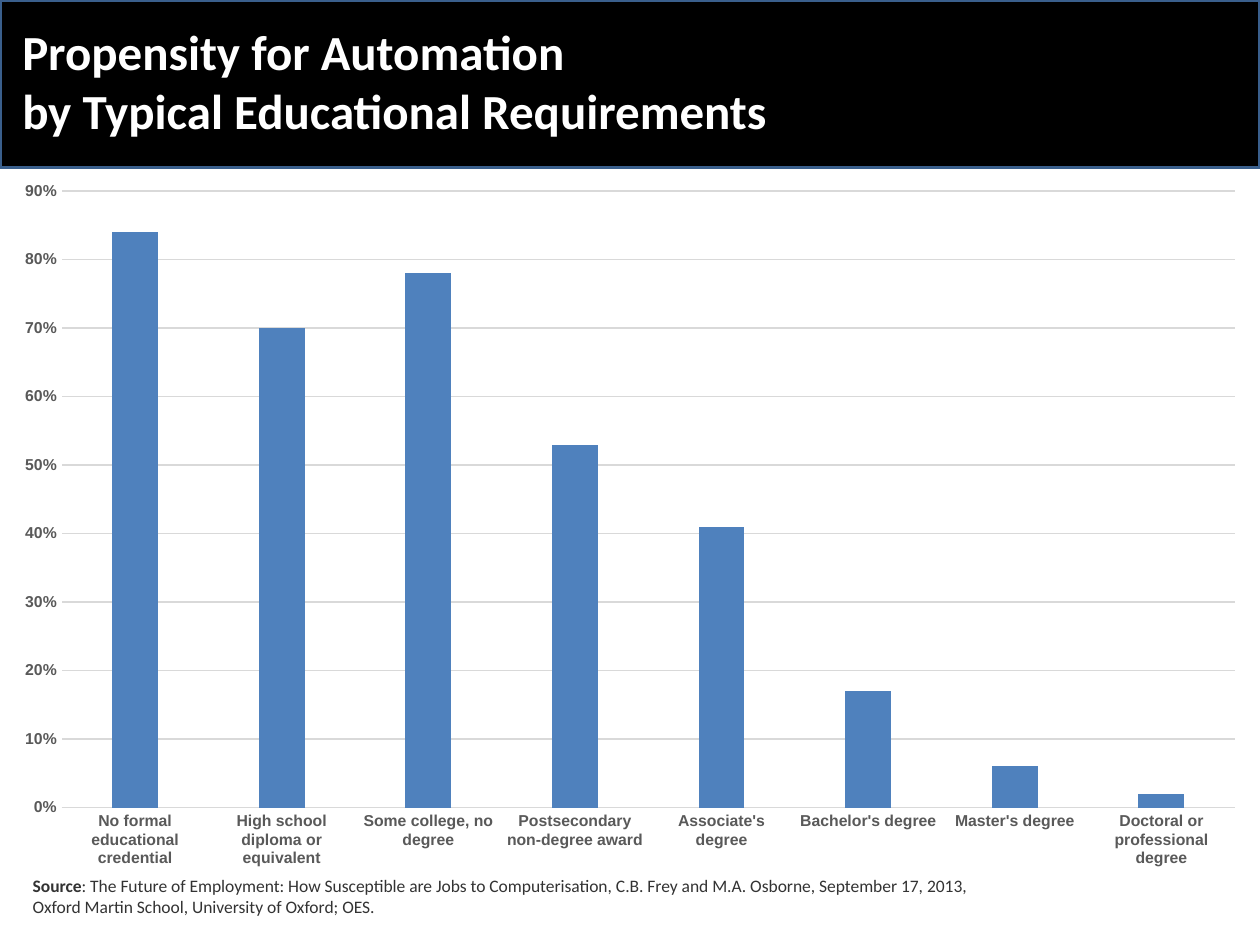
from dataclasses import dataclass

from pptx import Presentation
from pptx import util as u
from pptx.chart import data as chart_data
from pptx.dml import color
from pptx.enum import chart as chart_enum, shapes, text


@dataclass(frozen=True)
class Theme:
    black: color.RGBColor = color.RGBColor(0x00, 0x00, 0x00)
    white: color.RGBColor = color.RGBColor(0xFF, 0xFF, 0xFF)
    border: color.RGBColor = color.RGBColor(0x3A, 0x5F, 0x8C)
    bar: color.RGBColor = color.RGBColor(0x4F, 0x81, 0xBD)
    grid: color.RGBColor = color.RGBColor(0xD9, 0xD9, 0xD9)
    label: color.RGBColor = color.RGBColor(0x59, 0x59, 0x59)
    source: color.RGBColor = color.RGBColor(0x33, 0x33, 0x33)
    text_font: str = "Calibri"
    chart_font: str = "Arial"
    title_size: u.Pt = u.Pt(28)
    body_size: u.Pt = u.Pt(10)
    label_size: u.Pt = u.Pt(9)


THEME = Theme()

AUTOMATION_BY_EDUCATION = {
    "No formal educational credential": 0.84,
    "High school diploma or equivalent": 0.70,
    "Some college, no degree": 0.78,
    "Postsecondary non-degree award": 0.53,
    "Associate's degree": 0.41,
    "Bachelor's degree": 0.17,
    "Master's degree": 0.06,
    "Doctoral or professional degree": 0.02,
}


def style_font(font, name, size, rgb, bold=None):
    font.name = name
    font.size = size
    font.bold = bold
    font.color.rgb = rgb


def style_line(line, rgb, width):
    line.color.rgb = rgb
    line.width = width


def add_text_frame(slide, left, top, width, height):
    frame = slide.shapes.add_textbox(left, top, width, height).text_frame
    frame.word_wrap = True
    frame.vertical_anchor = text.MSO_ANCHOR.MIDDLE
    return frame


def add_header(slide, left, top, width, height, title):
    banner = slide.shapes.add_shape(
        shapes.MSO_SHAPE.RECTANGLE, left, top, width, height)
    banner.shadow.inherit = False
    banner.fill.solid()
    banner.fill.fore_color.rgb = THEME.black
    style_line(banner.line, THEME.border, u.Pt(2))

    frame = add_text_frame(slide, left + u.Cm(0.2), top + u.Cm(0.3),
                           width - u.Cm(0.63), height - u.Cm(0.74))
    paragraph = frame.paragraphs[0]
    paragraph.text = title
    style_font(paragraph.font, THEME.text_font, THEME.title_size, THEME.white, True)


def add_automation_chart(slide, left, top, width, height, shares):
    data = chart_data.CategoryChartData(number_format="0%")
    data.categories = list(shares)
    data.add_series("Series 1", list(shares.values()))
    chart = slide.shapes.add_chart(
        chart_enum.XL_CHART_TYPE.COLUMN_CLUSTERED,
        left, top, width, height, data).chart
    chart.has_legend = False
    chart.has_title = False
    style_font(chart.font, THEME.chart_font, THEME.body_size, THEME.black)

    plot = chart.plots[0]
    plot.vary_by_categories = False
    plot.gap_width = 219
    plot.overlap = -27
    fill = plot.series[0].format.fill
    fill.solid()
    fill.fore_color.rgb = THEME.bar

    for axis in (chart.category_axis, chart.value_axis):
        axis.major_tick_mark = chart_enum.XL_TICK_MARK.NONE
        axis.minor_tick_mark = chart_enum.XL_TICK_MARK.NONE
        style_font(axis.tick_labels.font, THEME.chart_font, THEME.label_size,
                   THEME.label, True)
    style_line(chart.category_axis.format.line, THEME.grid, u.Pt(0.75))

    value_axis = chart.value_axis
    value_axis.minimum_scale = 0
    value_axis.maximum_scale = 0.9
    value_axis.major_unit = 0.1
    value_axis.tick_labels.number_format = "0%"
    value_axis.tick_labels.number_format_is_linked = False
    value_axis.format.line.fill.background()
    style_line(value_axis.major_gridlines.format.line, THEME.grid, u.Pt(0.75))


def add_source_note(slide, left, top, width, height, heading, lines):
    frame = add_text_frame(slide, left, top, width, height)
    first = frame.paragraphs[0]
    heading_run = first.add_run()
    heading_run.text = heading
    heading_run.font.bold = True
    first.add_run().text = lines[0]
    for line in lines[1:]:
        frame.add_paragraph().text = line
    for paragraph in frame.paragraphs:
        style_font(paragraph.font, THEME.text_font, THEME.body_size, THEME.source)


def main():
    presentation = Presentation()
    presentation.slide_width = u.Cm(25.4)
    presentation.slide_height = u.Cm(19.05)
    slide = presentation.slides.add_slide(presentation.slide_layouts[6])
    width = presentation.slide_width
    header_height = u.Cm(3.38)

    add_header(slide, 0, 0, width, header_height,
               "Propensity for Automation\vby Typical Educational Requirements")
    add_automation_chart(slide, 0, header_height, width, u.Cm(14.4),
                         AUTOMATION_BY_EDUCATION)
    add_source_note(
        slide, u.Cm(0.41), u.Cm(17.48), width - u.Cm(0.41), u.Cm(1.17),
        "Source",
        [": The Future of Employment: How Susceptible are Jobs to Computerisation, "
         "C.B. Frey and M.A. Osborne, September 17, 2013,",
         "Oxford Martin School, University of Oxford; OES."])
    presentation.save("out.pptx")


if __name__ == "__main__":
    main()
